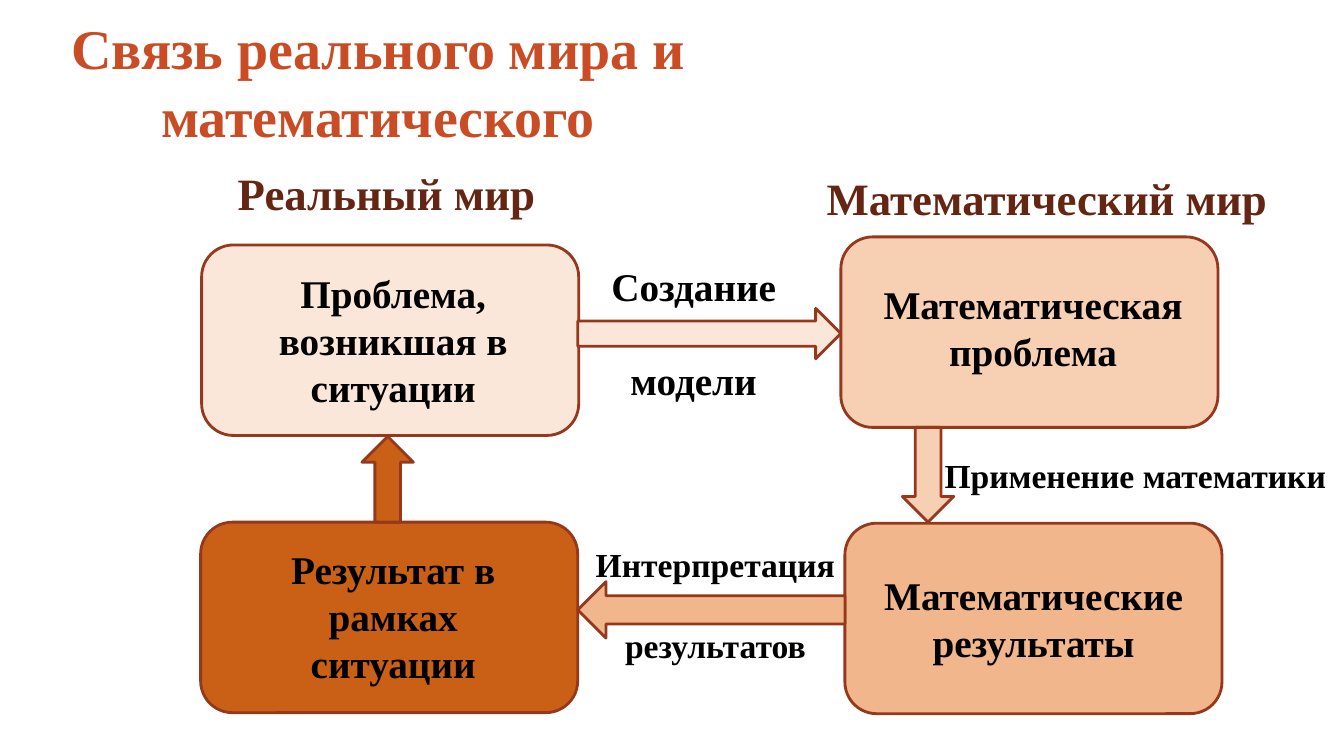
from dataclasses import dataclass

from pptx import Presentation
from pptx.dml.color import RGBColor
from pptx.enum.shapes import MSO_SHAPE as Shape
from pptx.enum.text import MSO_ANCHOR as Anchor, MSO_AUTO_SIZE as AutoSize, PP_ALIGN as Align
from pptx.util import Inches, Pt


@dataclass(frozen=True)
class Theme:
    font: str = "Times New Roman"
    title: str = "C94C25"
    heading: str = "642613"
    text: str = "000000"
    outline: str = "95381B"
    problem: str = "FBE7D9"
    math_problem: str = "F7CFB3"
    math_result: str = "F2B68C"
    result: str = "C96016"
    title_size: int = 40
    heading_size: int = 32
    body_size: int = 28
    label_size: int = 24
    line_width: int = 2


THEME = Theme()
CARD_WIDTH, CARD_HEIGHT = 3.74, 1.89


def write_text(frame, *lines, size, color=THEME.text, align=Align.CENTER, gap=0):
    frame.word_wrap = True
    for number, line in enumerate(lines):
        para = frame.add_paragraph() if number else frame.paragraphs[0]
        para.alignment = align
        if number:
            para.space_before = Pt(gap)
        span = para.add_run()
        span.text = line
        span.font.name = THEME.font
        span.font.size = Pt(size)
        span.font.bold = True
        span.font.color.rgb = RGBColor.from_string(color)


def add_text(page, box, *lines, **style):
    frame = page.shapes.add_textbox(*map(Inches, box)).text_frame
    write_text(frame, *lines, **style)


def add_block(page, kind, box, fill, rotation=0):
    block = page.shapes.add_shape(kind, *map(Inches, box))
    block.shadow.inherit = False
    block.rotation = rotation
    block.fill.solid()
    block.fill.fore_color.rgb = RGBColor.from_string(fill)
    block.line.color.rgb = RGBColor.from_string(THEME.outline)
    block.line.width = Pt(THEME.line_width)


def add_title(page, box, text):
    title = page.shapes.title
    title.left, title.top, title.width, title.height = map(Inches, box)
    frame = title.text_frame
    frame.auto_size = AutoSize.NONE
    frame.vertical_anchor = Anchor.MIDDLE
    frame.margin_left = frame.margin_right = 0
    write_text(frame, text, size=THEME.title_size, color=THEME.title)
    properties = frame.paragraphs[0]._p.get_or_add_pPr()
    properties.set("marL", str(Inches(0.2)))
    properties.set("indent", "0")


def add_card(page, left, top, fill, text, text_box):
    add_block(page, Shape.ROUNDED_RECTANGLE, (left, top, CARD_WIDTH, CARD_HEIGHT), fill)
    shift_x, shift_y, width, height = text_box
    add_text(page, (left + shift_x, top + shift_y, width, height), text, size=THEME.body_size)


def add_headings(page):
    for box, text in (
        ((2.26, 1.59, 3.17, 0.64), "Реальный мир"),
        ((8.1, 1.64, 4.74, 0.64), "Математический мир"),
    ):
        add_text(page, box, text, size=THEME.heading_size, color=THEME.heading, align=Align.LEFT)


def add_cards(page):
    for left, top, fill, text, text_box in (
        (2, 2.43, THEME.problem, "Проблема, возникшая в ситуации", (0.33, 0.19, 3.14, 1.51)),
        (8.34, 2.35, THEME.math_problem, "Математическая проблема", (0.26, 0.38, 3.29, 1.04)),
        (8.38, 5.19, THEME.math_result, "Математические результаты", (0.21, 0.43, 3.32, 1.04)),
        (1.99, 5.18, THEME.result, "Результат в рамках ситуации", (0.34, 0.18, 3.14, 1.51)),
    ):
        add_card(page, left, top, fill, text, text_box)


def add_arrows(page):
    for kind, box, fill, rotation in (
        (Shape.RIGHT_ARROW, (5.73, 3.06, 2.61, 0.5), THEME.problem, 0),
        (Shape.DOWN_ARROW, (8.95, 4.24, 0.51, 0.94), THEME.math_problem, 0),
        (Shape.RIGHT_ARROW, (5.73, 5.77, 2.65, 0.56), THEME.math_result, 180),
        (Shape.DOWN_ARROW, (3.59, 4.33, 0.51, 0.85), THEME.result, 180),
    ):
        add_block(page, kind, box, fill, rotation)


def add_labels(page):
    add_text(page, (5.96, 2.55, 1.84, 1.51), "Создание", "модели",
             size=THEME.body_size, gap=33.5)
    add_text(page, (9.27, 4.46, 4.06, 0.5), "Применение математики",
             size=THEME.label_size, align=Align.LEFT)
    add_text(page, (5.8, 5.35, 2.59, 1.31), "Интерпретация", "результатов",
             size=THEME.label_size, gap=29)


def main():
    deck = Presentation()
    deck.slide_width, deck.slide_height = Inches(13.33), Inches(7.5)
    page = deck.slides.add_slide(deck.slide_layouts.get_by_name("Title Only"))
    add_title(page, (0.27, 0.21, 6.76, 1.19), "Связь реального мира и математического")
    add_headings(page)
    add_cards(page)
    add_arrows(page)
    add_labels(page)
    deck.save("out.pptx")


if __name__ == "__main__":
    main()
